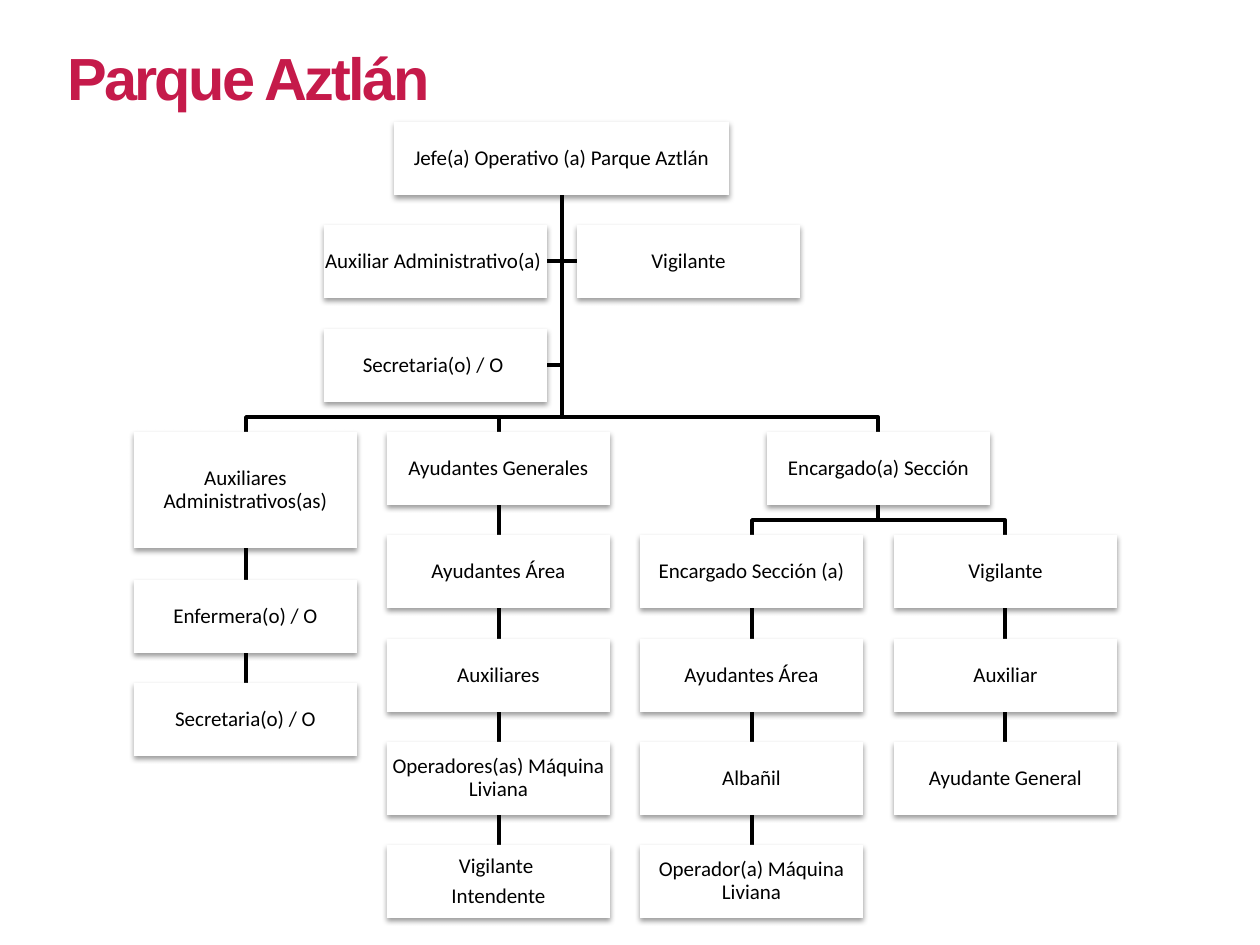
"""Builds the organisation chart slide of Parque Aztlán."""
from lxml import etree
from pptx import Presentation
from pptx import util as u
from pptx.dml.color import RGBColor
from pptx.enum import shapes, text
from pptx.oxml import ns, parse_xml

PX = 914400 / 126
CRIMSON = RGBColor(0xC5, 0x1A, 0x4A)
BLACK = RGBColor(0, 0, 0)
WHITE = RGBColor(255, 255, 255)
LEFT, TOP, COLUMN_STEP, ROW_STEP = 134, 122, 253.2, 103.35
BOX_W, BOX_H, TALL_H, HALF_GAP = 223, 73, 116, 15
SHADOW = (
    f'<a:outerShdw {ns.nsdecls("a")} blurRad="40000" dist="20000" dir="5400000" rotWithShape="0">'
    '<a:srgbClr val="000000"><a:alpha val="38000"/></a:srgbClr></a:outerShdw>'
)


def write(frame, content, font="Calibri", size=12, color=BLACK, bold=False,
          align=text.PP_ALIGN.CENTER, anchor=text.MSO_ANCHOR.MIDDLE,
          margin=1, line_spacing=0.9, after=4.2, tracking=None):
    frame.word_wrap = True
    frame.vertical_anchor = anchor
    frame.margin_left = frame.margin_right = u.Emu(round(margin * PX))
    frame.margin_top = frame.margin_bottom = u.Emu(round(min(margin, 6) * PX))
    frame.text = content
    for paragraph in frame.paragraphs:
        paragraph.alignment = align
        paragraph.line_spacing = line_spacing
        paragraph.space_before = u.Pt(0)
        paragraph.space_after = u.Pt(after)
        for run in paragraph.runs:
            run.font.name, run.font.size, run.font.bold = font, u.Pt(size), bold
            run.font.color.rgb = color
            if tracking:
                run._r.get_or_add_rPr().set("spc", str(tracking))


prs = Presentation()
prs.slide_width, prs.slide_height = u.Inches(10), u.Inches(7.5)
slide = prs.slides.add_slide(prs.slide_layouts[5])

title = slide.shapes.title
title.left, title.top, title.width, title.height = [u.Emu(round(v * PX)) for v in (54, 35, 446, 87)]
write(title.text_frame, "Parque Aztlán", font="Arial", size=34, color=CRIMSON, bold=True,
      align=text.PP_ALIGN.LEFT, anchor=text.MSO_ANCHOR.TOP, margin=13,
      line_spacing=1.0, after=0, tracking=-150)
title.text_frame.auto_size = text.MSO_AUTO_SIZE.SHAPE_TO_FIT_TEXT

positions = [
    ("Jefe(a) Operativo (a) Parque Aztlán", 1.25, 0, 335, BOX_H),
    ("Auxiliares Administrativos(as)", 0, 3, BOX_W, TALL_H),
    ("Auxiliar Administrativo(a) ", 0.75, 1, BOX_W, BOX_H),
    ("Vigilante", 1.75, 1, BOX_W, BOX_H),
    ("Secretaria(o) / O ", 0.75, 2, BOX_W, BOX_H),
    ("Encargado(a) Sección", 2.5, 3, BOX_W, BOX_H),
]
chains = [
    (0, 4.43, ["Enfermera(o) / O", "Secretaria(o) / O"]),
    (1, 3, ["Ayudantes Generales", "Ayudantes Área", "Auxiliares",
            "Operadores(as) Máquina Liviana", "Vigilante \nIntendente"]),
    (2, 4, ["Encargado Sección (a)", "Ayudantes Área", "Albañil", "Operador(a) Máquina Liviana"]),
    (3, 4, ["Vigilante", "Auxiliar", "Ayudante General"]),
]
positions += [(label, column, first + i, BOX_W, BOX_H)
              for column, first, labels in chains for i, label in enumerate(labels)]

centers = {column: round(LEFT + column * COLUMN_STEP + BOX_W / 2)
           for column in (0, 1, 1.25, 2, 2.5, 3)}
row_tops = {row: round(TOP + row * ROW_STEP) for _, _, row, _, _ in positions}

chief_x, chief_bottom = centers[1.25], TOP + BOX_H
branches = []
for side, row in ((-1, 2), (1, 1), (-1, 1)):
    middle = row_tops[row] + BOX_H // 2
    branches.append([(chief_x, chief_bottom), (chief_x, middle),
                     (chief_x + side * HALF_GAP, middle)])
for parent, parent_row, child, child_row in (
        (2.5, 3, 3, 4), (2.5, 3, 2, 4), (1.25, 0, 2.5, 3), (1.25, 0, 1, 3), (1.25, 0, 0, 3)):
    start, end, child_top = centers[parent], centers[child], row_tops[child_row]
    branches.append([(start, row_tops[parent_row] + BOX_H), (start, child_top - HALF_GAP),
                     (end, child_top - HALF_GAP), (end, child_top)])

for points in branches:
    builder = slide.shapes.build_freeform(*points[0], scale=PX)
    builder.add_line_segments(points[1:], close=False)
    branch = builder.convert_to_shape()
    branch.shadow.inherit = False
    branch.fill.background()
    branch.line.color.rgb, branch.line.width = BLACK, u.Pt(2)

links = [(0, row_tops[3] + TALL_H, row_tops[4.43])]
links += [(column, row_tops[first + i] + BOX_H, row_tops[first + i + 1])
          for column, first, labels in chains for i in range(len(labels) - 1)]
for column, start, end in links:
    x = u.Emu(round(centers[column] * PX))
    link = slide.shapes.add_connector(shapes.MSO_CONNECTOR.STRAIGHT, x, u.Emu(round(start * PX)),
                                      x, u.Emu(round(end * PX)))
    link.line.color.rgb, link.line.width = BLACK, u.Pt(2)
    etree.SubElement(link._element.spPr, ns.qn("a:effectLst"))

for label, column, row, width, height in positions:
    left = round(LEFT + column * COLUMN_STEP + (BOX_W - width) / 2)
    post = slide.shapes.add_shape(shapes.MSO_SHAPE.RECTANGLE, *[
        u.Emu(round(v * PX)) for v in (left, row_tops[row], width, height)])
    post.fill.solid()
    post.fill.fore_color.rgb = WHITE
    post.line.fill.background()
    post.shadow.inherit = False
    post._element.spPr.find(ns.qn("a:effectLst")).append(parse_xml(SHADOW))
    write(post.text_frame, label)

prs.save("out.pptx")
